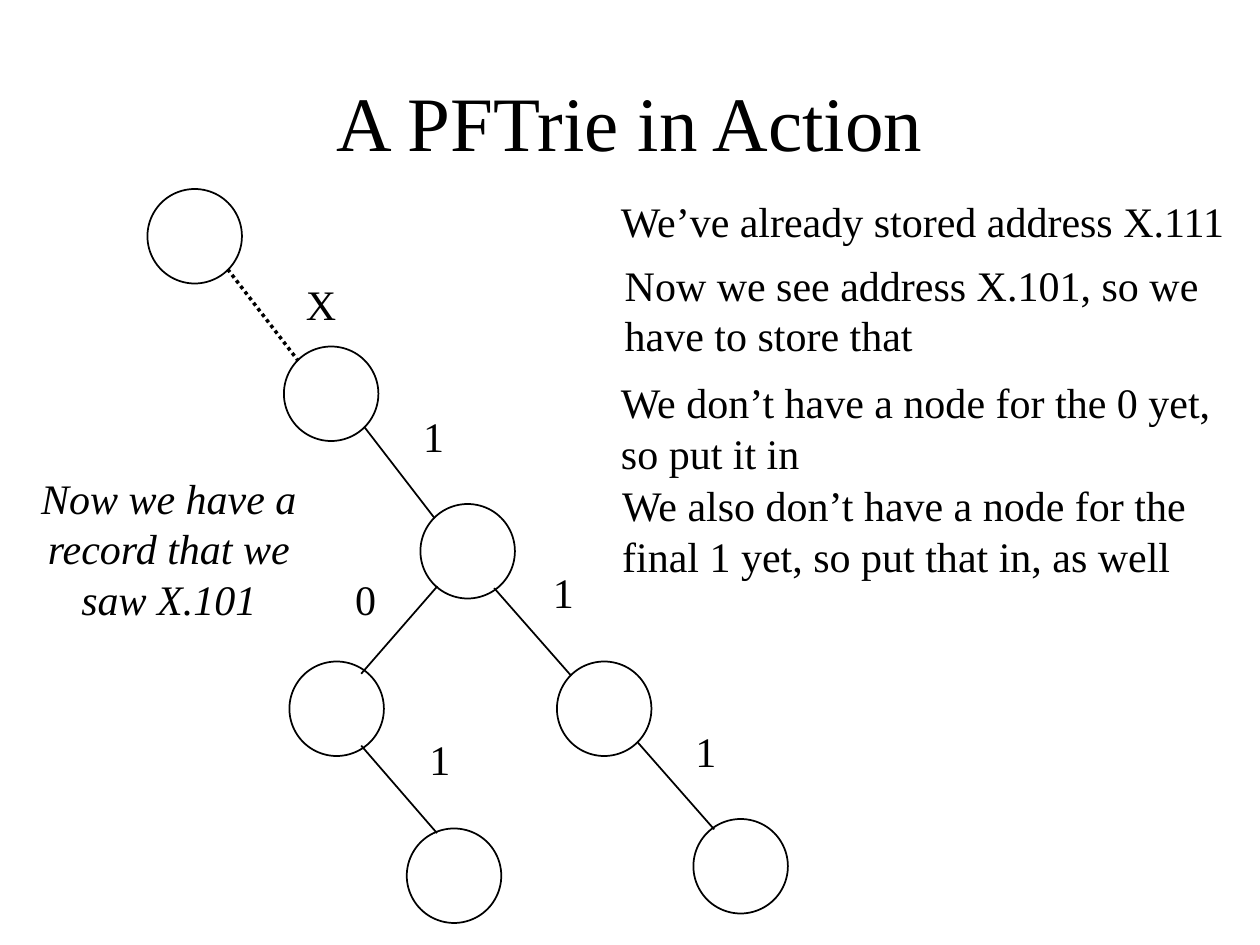
from lxml import etree
from pptx import Presentation
from pptx import util as u
from pptx.dml.color import RGBColor
from pptx.enum import dml, shapes, text
from pptx.oxml.ns import qn

BLACK = RGBColor(0, 0, 0)
FONT = "Times New Roman"

prs = Presentation()
prs.slide_width, prs.slide_height = u.Inches(10), u.Inches(7.5)
s = prs.slides.add_slide(prs.slide_layouts[5])

# Tree grid: each level is one column right and one row down
COL, ROW = prs.slide_width * 13 / 120, prs.slide_height / 6
X0, Y0 = prs.slide_width * 0.1545, prs.slide_height / 4
NODE = u.Inches(0.75)


def write(shape, words, size=24, italic=False, align=text.PP_ALIGN.LEFT,
          wrap=True, anchor=text.MSO_ANCHOR.TOP):
    tf = shape.text_frame
    tf.word_wrap = wrap
    tf.vertical_anchor = anchor
    tf.margin_left = tf.margin_right = u.Inches(0.1)
    tf.margin_top = tf.margin_bottom = u.Inches(0.05)
    p = tf.paragraphs[0]
    p.alignment = align
    r = p.add_run()
    r.text = words
    r.font.name, r.font.size = FONT, u.Pt(size)
    r.font.italic = italic
    r.font.color.rgb = BLACK


# Title
title = s.shapes.title
title.left, title.top = u.Inches(0.75), u.Inches(0.33)
title.width, title.height = u.Inches(8.5), u.Inches(1.25)
write(title, "A PFTrie in Action", size=44, align=text.PP_ALIGN.CENTER,
      anchor=text.MSO_ANCHOR.MIDDLE)

# Nodes: centres in columns and rows of the tree grid
nodes = {"root": (0, 0), "X": (1, 1), "X.1": (2, 2), "X.11": (3, 3),
         "X.111": (4, 4), "X.10": (1.04, 3), "X.101": (1.9, 4.06)}
centres = {}
for name, (col, row) in nodes.items():
    x, y = centres[name] = X0 + col * COL, Y0 + row * ROW
    sp = s.shapes.add_shape(shapes.MSO_SHAPE.OVAL, int(x - NODE / 2),
                            int(y - NODE / 2), NODE, NODE)
    sp.shadow.inherit = False
    sp.fill.background()
    sp.line.color.rgb = BLACK
    sp.line.width = u.Pt(1)

# Edges: parent, child, and the offset of each end as a share of the node size
edges = [("root", "X", (0.35, 0.35), (-0.35, -0.35)),
         ("X", "X.1", (0.35, 0.35), (-0.35, -0.35)),
         ("X.1", "X.11", (0.28, 0.39), (-0.35, -0.35)),
         ("X.11", "X.111", (0.35, 0.35), (-0.28, -0.39)),
         ("X.1", "X.10", (-0.32, 0.37), (0.26, -0.37)),
         ("X.10", "X.101", (0.26, 0.39), (-0.18, -0.45))]
for parent, child, *offsets in edges:
    ends = [int(c + d * NODE)
            for name, offset in zip((parent, child), offsets)
            for c, d in zip(centres[name], offset)]
    line = s.shapes.add_connector(shapes.MSO_CONNECTOR.STRAIGHT, *ends)
    line.line.color.rgb = BLACK
    line.line.width = u.Pt(1)
    if parent == "root":
        line.line.width = u.Pt(2)
        line.line.dash_style = dml.MSO_LINE.ROUND_DOT
    etree.SubElement(line._element.spPr, qn("a:effectLst"))

# Edge labels
labels = [("X", 2.33, 2.16), ("1", 3.26, 3.21), ("1", 4.29, 4.45),
          ("1", 5.42, 5.71), ("0", 2.72, 4.5), ("1", 3.31, 5.77)]
for label, x, y in labels:
    width = 0.45 if label == "X" else 0.37
    box = s.shapes.add_textbox(*map(u.Inches, (x, y, width, 0.5)))
    write(box, label, wrap=False)

# Explanation steps
steps = [("We’ve already stored address X.111", 4.83, 1.5, 0.5),
         ("Now we see address X.101, so we have to store that", 4.86, 2.01, 0.91),
         ("We don’t have a node for the 0 yet, so put it in", 4.83, 2.94, 0.91),
         ("We also don’t have a node for the final 1 yet, so put that in, as well",
          4.84, 3.76, 0.91)]
for words, x, y, height in steps:
    box = s.shapes.add_textbox(*map(u.Inches, (x, y, 5.06, height)))
    write(box, words, wrap=height > 0.5)

# Conclusion
box = s.shapes.add_textbox(*map(u.Inches, (0.15, 3.7, 2.38, 1.31)))
write(box, "Now we have a record that we saw X.101", italic=True,
      align=text.PP_ALIGN.CENTER)

prs.save("out.pptx")
